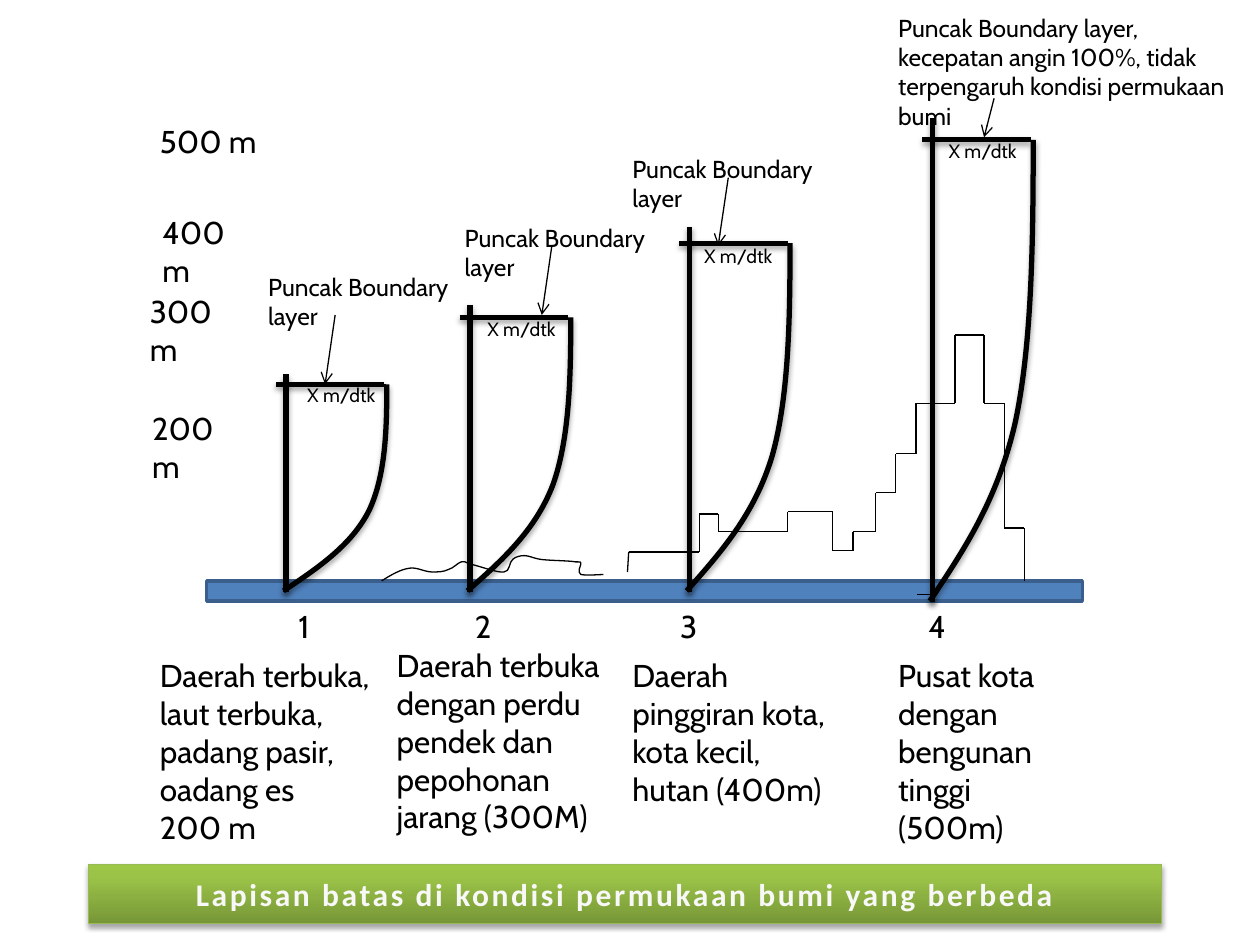
import copy
import itertools
from dataclasses import dataclass

import lxml.etree
import pptx
import pptx.dml.color
import pptx.enum.shapes
import pptx.enum.text
import pptx.oxml.ns
import pptx.util

Inches = pptx.util.Inches
Pt = pptx.util.Pt
RGB = pptx.dml.color.RGBColor
qn = pptx.oxml.ns.qn


@dataclass(frozen=True)
class Theme:
    ink: RGB = RGB.from_string("000000")
    ground: RGB = RGB.from_string("4F81BD")
    ground_edge: RGB = RGB.from_string("3A5F8C")
    banner_text: RGB = RGB.from_string("F8F8F8")
    banner_edge: RGB = RGB.from_string("98B955")
    banner_stops: tuple = ((0, "779737"), (0.8, "9BC348"), (1, "9DC746"))
    font: str = "Cabin"
    banner_font: str = "Calibri"
    body: Pt = Pt(18)
    note: Pt = Pt(14)
    small: Pt = Pt(11)
    thin: Pt = Pt(0.75)
    edge: Pt = Pt(2)
    thick: Pt = Pt(3)


theme = Theme()
presentation = pptx.Presentation()
presentation.slide_width = Inches(10)
presentation.slide_height = Inches(7.5)
slide = presentation.slides.add_slide(presentation.slide_layouts[6])
shapes = slide.shapes
flat_shapes = []
shadowed_shapes = []


def add_label(text, left, top, width, height, size):
    frame = shapes.add_textbox(Inches(left), Inches(top), Inches(width), Inches(height)).text_frame
    frame.word_wrap = True
    frame.auto_size = pptx.enum.text.MSO_AUTO_SIZE.SHAPE_TO_FIT_TEXT
    frame.text = text
    for paragraph in frame.paragraphs:
        paragraph.font.name = theme.font
        paragraph.font.size = size
        paragraph.font.color.rgb = theme.ink


def add_line(start, end, width):
    line = shapes.add_connector(
        pptx.enum.shapes.MSO_CONNECTOR.STRAIGHT, *map(Inches, (*start, *end))
    )
    line.line.color.rgb = theme.ink
    line.line.width = width
    (shadowed_shapes if width == theme.thick else flat_shapes).append(line)
    return line


for height, left, top, width in (
    ("200 m", 1.11, 3.2, 0.85),
    ("300 m", 1.09, 2.27, 0.85),
    ("400 m", 1.19, 1.64, 0.85),
    ("500 m", 1.17, 0.92, 0.99),
):
    add_label(height, left, top, width, 0.4, theme.body)

for number, left in enumerate((2.27, 3.67, 5.3, 7.27), start=1):
    add_label(str(number), left, 4.77, 0.33, 0.4, theme.body)

for terrain, left, top, width, height in (
    ("Daerah terbuka, laut terbuka, padang pasir, oadang es\n200 m", 1.17, 5.16, 1.88, 1.92),
    ("Daerah terbuka dengan perdu pendek dan pepohonan jarang (300M)", 3.05, 5.08, 1.95, 1.62),
    ("Daerah pinggiran kota, kota kecil, hutan (400m)", 4.92, 5.16, 1.8, 1.31),
    ("Pusat kota dengan bengunan tinggi (500m)", 7.03, 5.16, 1.41, 1.62),
):
    add_label(terrain, left, top, width, height, theme.body)

ground = shapes.add_shape(
    pptx.enum.shapes.MSO_SHAPE.RECTANGLE, Inches(1.64), Inches(4.61), Inches(6.95), Inches(0.16)
)
ground.fill.solid()
ground.fill.fore_color.rgb = theme.ground
ground.line.color.rgb = theme.ground_edge
ground.line.width = theme.edge
flat_shapes.append(ground)

profile_shape = (
    (0.8, 0), (0.8, 0.22), (0.79, 0.44), (0.66, 0.61), (0.52, 0.78), (0.25, 0.89), (-0.02, 1),
)
curves = []
for axis, top, cap, base in (
    (2.27, 2.97, 3.05, 4.69),
    (3.73, 2.42, 2.52, 4.69),
    (5.47, 1.8, 1.93, 4.69),
    (7.4, 0.94, 1.11, 4.77),
):
    add_line((axis, top), (axis, base + 0.01), theme.thick)
    add_line((axis - 0.08, cap), (axis + 0.78, cap), theme.thick)
    profile = [(axis + x, cap + y * (base - cap)) for x, y in profile_shape]
    curves.append((profile, theme.thick))

shrubs = (
    (3.03, 4.61), (3.11, 4.56), (3.18, 4.52), (3.25, 4.51), (3.31, 4.5), (3.37, 4.54),
    (3.43, 4.54), (3.48, 4.54), (3.52, 4.54), (3.56, 4.52), (3.6, 4.51), (3.63, 4.47),
    (3.66, 4.46), (3.69, 4.45), (3.68, 4.46), (3.74, 4.48), (3.8, 4.49), (3.95, 4.55),
    (4, 4.54), (4.05, 4.54), (4.04, 4.46), (4.07, 4.44), (4.09, 4.42), (4.13, 4.41),
    (4.16, 4.41), (4.2, 4.41), (4.23, 4.43), (4.29, 4.44), (4.36, 4.45), (4.52, 4.45),
    (4.57, 4.46), (4.63, 4.46), (4.6, 4.46), (4.61, 4.48), (4.61, 4.49), (4.58, 4.54),
    (4.61, 4.56), (4.64, 4.57), (4.79, 4.56), (4.79, 4.56),
)
curves.append((shrubs, theme.thin))

for points, width in curves:
    start, *controls = [(Inches(x), Inches(y)) for x, y in points]
    builder = shapes.build_freeform(*start)
    builder.add_line_segments(controls, close=False)
    curve = builder.convert_to_shape()
    outline = next(curve._element.iter(qn("a:path")))
    segments = outline.findall(qn("a:lnTo"))
    for first in range(0, len(segments), 3):
        bezier = lxml.etree.SubElement(outline, qn("a:cubicBezTo"))
        for segment in segments[first:first + 3]:
            bezier.append(segment[0])
            outline.remove(segment)
    curve.fill.background()
    curve.line.color.rgb = theme.ink
    curve.line.width = width
    (shadowed_shapes if width == theme.thick else flat_shapes).append(curve)

skyline = (
    (4.98, 4.54), (4.99, 4.38), (5.55, 4.38), (5.55, 4.08), (5.7, 4.08), (5.7, 4.22),
    (6.25, 4.22), (6.25, 4.06), (6.61, 4.06), (6.61, 4.37), (6.77, 4.37), (6.77, 4.22),
    (6.95, 4.22), (6.95, 3.91), (7.11, 3.91), (7.11, 3.6), (7.27, 3.6), (7.27, 3.2),
    (7.58, 3.2), (7.58, 2.66), (7.81, 2.66), (7.81, 3.2), (7.97, 3.2), (7.97, 4.19),
    (8.13, 4.19), (8.13, 4.61),
)
for start, end in itertools.pairwise(skyline):
    add_line(start, end, theme.thin)
add_line((7.28, 4.72), (7.44, 4.72), theme.thin)

for left, top in ((2.03, 2.11), (3.59, 1.72), (4.92, 1.17)):
    add_label("Puncak Boundary\nlayer", left, top, 1.64, 0.57, theme.note)
add_label(
    "Puncak Boundary layer, kecepatan angin 100%, tidak terpengaruh kondisi permukaan bumi",
    7.03, 0.05, 2.97, 0.81, theme.note,
)

for left, top, height in ((2.66, 2.5, 0.55), (4.38, 1.95, 0.55), (5.78, 1.41, 0.54), (7.89, 0.78, 0.31)):
    arrow = add_line((left, top), (left - 0.08, top + height), theme.thin)
    lxml.etree.SubElement(arrow.line._get_or_add_ln(), qn("a:tailEnd"), type="arrow")

for left, top in ((2.34, 2.99), (3.77, 2.47), (5.49, 1.89), (7.43, 1.06)):
    add_label("X m/dtk", left, top, 0.94, 0.29, theme.small)

banner = shapes.add_shape(
    pptx.enum.shapes.MSO_SHAPE.RECTANGLE, Inches(0.7), Inches(6.86), Inches(8.52), Inches(0.47)
)
banner.fill.gradient()
banner.fill.gradient_angle = 90
stop_list = next(banner._element.iter(qn("a:gsLst")))
stop_list.append(copy.deepcopy(stop_list[-1]))
for stop, (position, color) in zip(banner.fill.gradient_stops, theme.banner_stops):
    stop.position = position
    stop.color.rgb = RGB.from_string(color)
banner.line.color.rgb = theme.banner_edge
banner.line.width = theme.thin
shadowed_shapes.append(banner)
banner.text_frame.text = "Lapisan batas di kondisi permukaan bumi yang berbeda"
banner.text_frame.vertical_anchor = pptx.enum.text.MSO_ANCHOR.MIDDLE
paragraph = banner.text_frame.paragraphs[0]
paragraph.alignment = pptx.enum.text.PP_ALIGN.CENTER
paragraph.font.name = theme.banner_font
paragraph.font.size = theme.body
paragraph.font.bold = True
paragraph.font.color.rgb = theme.banner_text
paragraph.runs[0]._r.get_or_add_rPr().set("spc", "150")

for shape in flat_shapes + shadowed_shapes:
    effects = lxml.etree.SubElement(shape._element.spPr, qn("a:effectLst"))
    if shape in shadowed_shapes:
        shadow = lxml.etree.SubElement(
            effects, qn("a:outerShdw"), blurRad=str(Pt(3.1)), dist=str(Pt(1.8)), dir="5400000", rotWithShape="0"
        )
        color = lxml.etree.SubElement(shadow, qn("a:srgbClr"), val=str(theme.ink))
        lxml.etree.SubElement(color, qn("a:alpha"), val="35000")

presentation.save("out.pptx")
